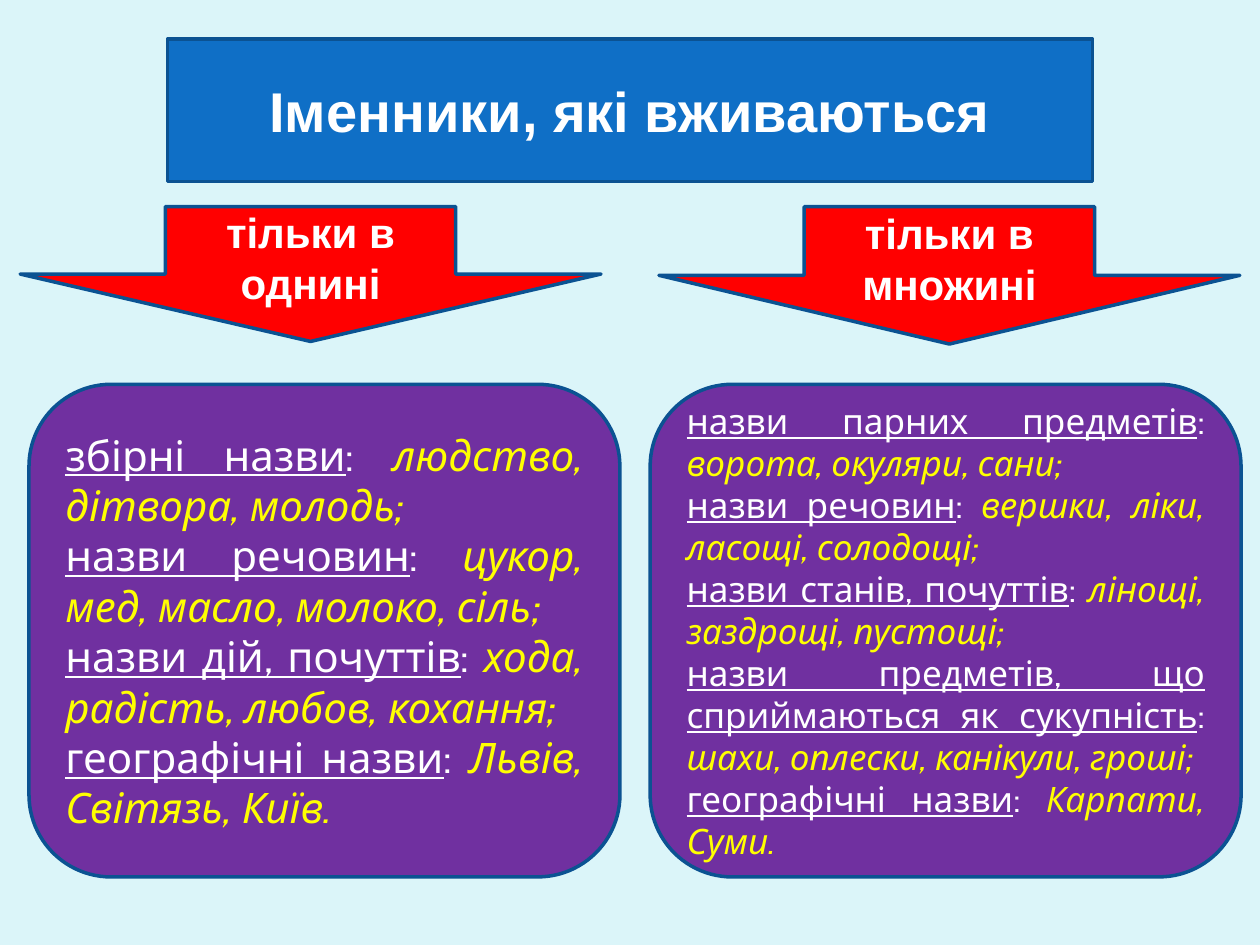
from lxml import etree
from pptx import Presentation
from pptx.dml.color import RGBColor
from pptx.enum.shapes import MSO_SHAPE
from pptx.enum.text import MSO_ANCHOR, MSO_AUTO_SIZE, PP_ALIGN
from pptx.oxml.ns import qn
from pptx.util import Inches, Pt

PALE = RGBColor(0xDB, 0xF5, 0xF9)
BLUE = RGBColor(0x0F, 0x6F, 0xC6)
NAVY = RGBColor(0x0B, 0x52, 0x92)
RED = RGBColor(0xFF, 0x00, 0x00)
PURPLE = RGBColor(0x70, 0x30, 0xA0)
WHITE = RGBColor(0xFF, 0xFF, 0xFF)
YELLOW = RGBColor(0xFF, 0xFF, 0x00)

SINGULAR = [
    ("збірні назви", "людство, дітвора, молодь;"),
    ("назви речовин", "цукор, мед, масло, молоко, сіль;"),
    ("назви дій, почуттів", "хода, радість, любов, кохання;"),
    ("географічні назви", "Львів, Світязь, Київ."),
]
PLURAL = [
    ("назви парних предметів", "ворота, окуляри, сани;"),
    ("назви речовин", "вершки, ліки, ласощі, солодощі;"),
    ("назви станів, почуттів", "лінощі, заздрощі, пустощі;"),
    ("назви предметів, що сприймаються як сукупність",
     "шахи, оплески, канікули, гроші;"),
    ("географічні назви", "Карпати, Суми."),
]


def apply_format(target, values):
    for name, value in values.items():
        setattr(target, name, value)


def add_span(para, text, color, **values):
    span = para.add_run()
    span.text = text
    apply_format(span.font, values)
    span.font.color.rgb = color


def style_shape(shape, fill):
    shape.shadow.inherit = False
    shape.fill.solid()
    shape.fill.fore_color.rgb = fill
    shape.line.color.rgb = NAVY
    shape.line.width = Pt(2)
    apply_format(shape.text_frame, {
        "word_wrap": True,
        "auto_size": MSO_AUTO_SIZE.NONE,
        "vertical_anchor": MSO_ANCHOR.MIDDLE,
    })


def add_heading(shape, text, size):
    para = shape.text_frame.paragraphs[0]
    para.alignment = PP_ALIGN.CENTER
    add_span(para, text, WHITE, name="Arial", size=Pt(size), bold=True)


def place_title(page, box, text):
    """Turn the title placeholder into a scroll banner."""
    title = page.shapes.title
    apply_format(title, dict(zip(("left", "top", "width", "height"), box)))
    outline = etree.SubElement(title.element.spPr, qn("a:prstGeom"), prst="horizontalScroll")
    etree.SubElement(outline, qn("a:avLst"))
    style_shape(title, BLUE)
    add_heading(title, text, 32)


def add_arrow(page, box, text):
    arrow = page.shapes.add_shape(MSO_SHAPE.DOWN_ARROW, *box)
    style_shape(arrow, RED)
    add_heading(arrow, text, 24)


def add_panel(page, box, groups, size):
    panel = page.shapes.add_shape(MSO_SHAPE.ROUNDED_RECTANGLE, *box)
    style_shape(panel, PURPLE)
    frame = panel.text_frame
    base = {"name": "Cabin", "size": Pt(size)}
    for index, (label, examples) in enumerate(groups):
        para = frame.add_paragraph() if index else frame.paragraphs[0]
        para.alignment = PP_ALIGN.JUSTIFY
        add_span(para, label, WHITE, underline=True, **base)
        add_span(para, ": ", WHITE, **base)
        add_span(para, examples, YELLOW, italic=True, **base)


def inches(*lengths):
    return [Inches(length) for length in lengths]


def main():
    deck = Presentation()
    deck.slide_width, deck.slide_height = inches(10, 7.5)
    page = deck.slides.add_slide(deck.slide_layouts[5])
    page.background.fill.solid()
    page.background.fill.fore_color.rgb = PALE

    place_title(page, inches(1.33, 0.31, 7.34, 1.13), "Іменники, які вживаються")
    add_arrow(page, inches(0.16, 1.64, 4.61, 1.07), "тільки в однині")
    add_arrow(page, inches(5.23, 1.64, 4.61, 1.09), "тільки в множині")
    add_panel(page, inches(0.23, 3.05, 4.69, 3.91), SINGULAR, 24)
    add_panel(page, inches(5.16, 3.05, 4.69, 3.91), PLURAL, 20)
    deck.save("out.pptx")


if __name__ == "__main__":
    main()
